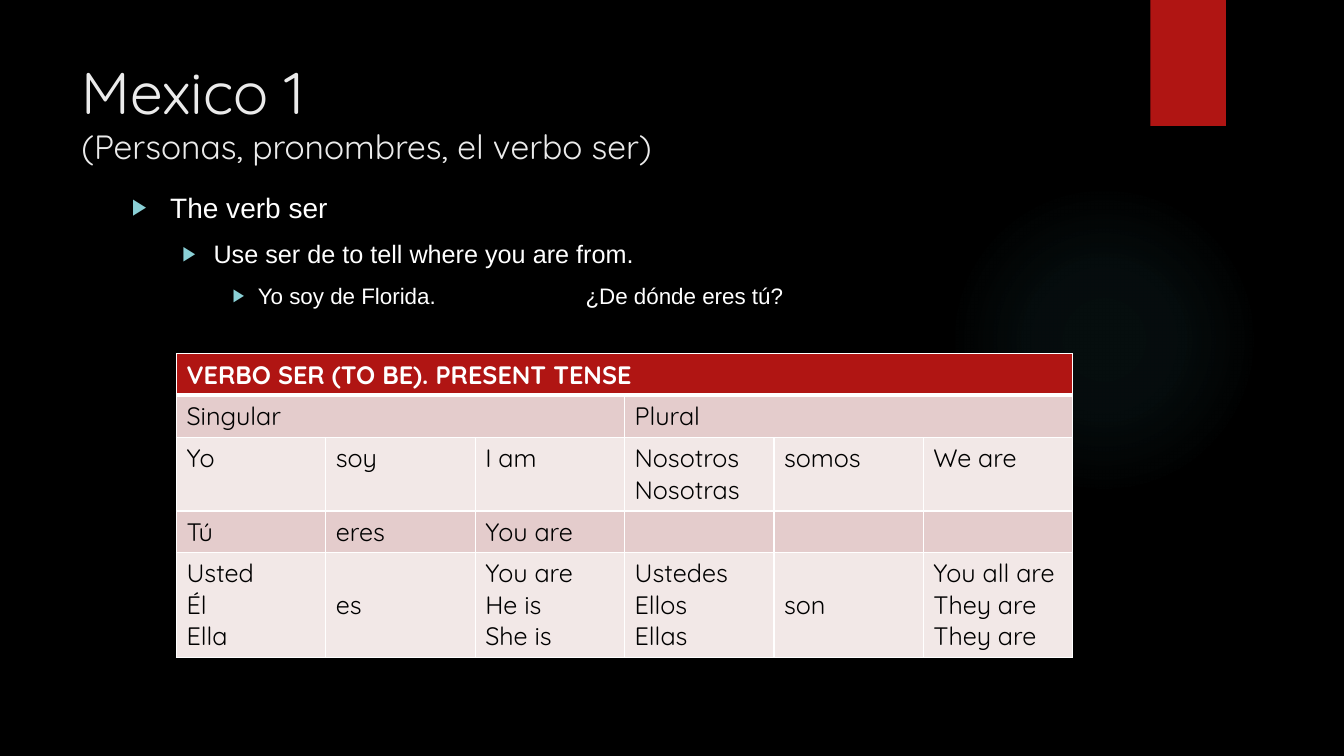
from lxml import etree
from pptx import Presentation
from pptx.dml.color import RGBColor
from pptx.enum import shapes, text
from pptx.oxml import parse_xml
from pptx.oxml.ns import nsdecls, qn
from pptx.util import Inches, Pt

BLACK = RGBColor(0x00, 0x00, 0x00)
WHITE = RGBColor(0xFF, 0xFF, 0xFF)
TITLE_GREY = RGBColor(0xEB, 0xEB, 0xEB)
RED = RGBColor(0xB0, 0x15, 0x13)
PINK = RGBColor(0xE4, 0xCC, 0xCC)
PALE_PINK = RGBColor(0xF2, 0xE8, 0xE7)
TEAL = RGBColor(0x50, 0xB9, 0xC1)
BULLET_TEAL = RGBColor(0x8A, 0xD0, 0xD6)

# Level: (left margin, hanging indent, text size)
LEVELS = [(0.38, 0.38, 20), (0.81, 0.31, 18), (1.25, 0.25, 16)]
BULLETS = [
    "The verb ser",
    "Use ser de to tell where you are from.",
    "Yo soy de Florida.\t¿De dónde eres tú?",
]
QUESTION_TAB = 4.5

COLUMN_WIDTH = 8.89 / 6
ROW_HEIGHTS = [0.41, 0.42, 0.73, 0.41, 1.04]
VERB_ROWS = [
    ["VERBO SER (TO BE). PRESENT TENSE"] + [""] * 5,
    ["Singular", "", "", "Plural", "", ""],
    ["Yo", "soy", "I am", "Nosotros\nNosotras", "somos", "We are"],
    ["Tú", "eres", "You are", "", "", ""],
    ["Usted\nÉl\nElla", "es", "You are\nHe is\nShe is",
     "Ustedes\nEllos\nEllas", "son", "You all are\nThey are\nThey are"],
]
ROW_FILLS = [RED, PINK, PALE_PINK, PINK, PALE_PINK]


def add_run(paragraph, content, size=18, font="Quicksand", color=BLACK, bold=False):
    run = paragraph.add_run()
    run.text = content
    run.font.size = Pt(size)
    run.font.name = font
    run.font.bold = bold
    run.font.color.rgb = color


def add_text_frame(slide, left, top, width, height):
    box = slide.shapes.add_textbox(*map(Inches, (left, top, width, height)))
    box.text_frame.word_wrap = True
    return box.text_frame


def add_plain_shape(slide, kind, left, top, width, height):
    shape = slide.shapes.add_shape(kind, *map(Inches, (left, top, width, height)))
    shape.shadow.inherit = False
    shape.line.fill.background()
    return shape


def add_glow(slide):
    glow = add_plain_shape(slide, shapes.MSO_SHAPE.OVAL, 9.41, 1.83, 3.08, 3.08)
    stops = "".join(
        f'<a:gs pos="{position * 1000}"><a:srgbClr val="{TEAL}">'
        f'<a:alpha val="{opacity * 1000}"/></a:srgbClr></a:gs>'
        for position, opacity in [(0, 7), (36, 6), (69, 0)])
    gradient = parse_xml(
        f'<a:gradFill {nsdecls("a")}><a:gsLst>{stops}</a:gsLst><a:path path="circle">'
        '<a:fillToRect l="50000" t="50000" r="50000" b="50000"/></a:path></a:gradFill>')
    glow._element.spPr.find(qn("a:prstGeom")).addnext(gradient)


def add_ribbon(slide):
    ribbon = add_plain_shape(slide, shapes.MSO_SHAPE.RECTANGLE, 11.41, 0, 0.75, 1.25)
    ribbon.fill.solid()
    ribbon.fill.fore_color.rgb = RED
    effects = ribbon._element.spPr.find(qn("a:effectLst"))
    effects.append(parse_xml(
        f'<a:outerShdw {nsdecls("a")} blurRad="{Pt(3)}" dist="{Pt(2)}" dir="5400000">'
        f'<a:srgbClr val="{BLACK}"><a:alpha val="45000"/></a:srgbClr></a:outerShdw>'))


def format_bullet(paragraph, level):
    margin, hanging, _ = LEVELS[level]
    paragraph.level = level
    properties = paragraph._p.get_or_add_pPr()
    properties.set("marL", str(Inches(margin)))
    properties.set("indent", str(-Inches(hanging)))
    color = etree.SubElement(properties, qn("a:buClr"))
    etree.SubElement(color, qn("a:srgbClr"), val=str(BULLET_TEAL))
    etree.SubElement(properties, qn("a:buSzPct"), val="80000")
    etree.SubElement(properties, qn("a:buFont"), typeface="Arial")
    etree.SubElement(properties, qn("a:buChar"), char="▶")
    tabs = etree.SubElement(properties, qn("a:tabLst"))
    etree.SubElement(tabs, qn("a:tab"), pos=str(Inches(QUESTION_TAB)), algn="l")


def add_bullets(slide):
    frame = add_text_frame(slide, 1.21, 1.84, 10.63, 1.5)
    for level, content in enumerate(BULLETS):
        paragraph = frame.add_paragraph() if level else frame.paragraphs[0]
        format_bullet(paragraph, level)
        if level:
            paragraph.space_before = Pt(10)
        add_run(paragraph, content, size=LEVELS[level][2], font="Arial", color=WHITE)


def set_borders(cell, bottom_width):
    properties = cell._tc.get_or_add_tcPr()
    for side, width in [("L", 1), ("R", 1), ("T", 1), ("B", bottom_width)]:
        properties.append(parse_xml(
            f'<a:ln{side} {nsdecls("a")} w="{Pt(width)}"><a:solidFill>'
            f'<a:srgbClr val="{WHITE}"/></a:solidFill></a:ln{side}>'))


def fill_cell(cell, content, fill, header, centred):
    set_borders(cell, 3 if header else 1)
    cell.fill.solid()
    cell.fill.fore_color.rgb = fill
    if centred:
        cell.vertical_anchor = text.MSO_ANCHOR.MIDDLE
    for index, line in enumerate(content.split("\n") if content else []):
        frame = cell.text_frame
        paragraph = frame.add_paragraph() if index else frame.paragraphs[0]
        add_run(paragraph, line, color=WHITE if header else BLACK, bold=header)


def add_verb_table(slide):
    table = slide.shapes.add_table(
        len(VERB_ROWS), 6, Inches(1.75), Inches(3.51),
        Inches(6 * COLUMN_WIDTH), Inches(sum(ROW_HEIGHTS))).table
    table.first_row = table.horz_banding = False
    for column in table.columns:
        column.width = Inches(COLUMN_WIDTH)
    for r, row in enumerate(VERB_ROWS):
        table.rows[r].height = Inches(ROW_HEIGHTS[r])
        for c, content in enumerate(row):
            # The verb forms in the last row sit beside three pronouns
            centred = r == 4 and c in (1, 4)
            fill_cell(table.cell(r, c), content, ROW_FILLS[r], r == 0, centred)
    # Heading spans
    for r, first, last in [(0, 0, 5), (1, 0, 2), (1, 3, 5)]:
        table.cell(r, first).merge(table.cell(r, last))


def main():
    presentation = Presentation()
    presentation.slide_width = Inches(13.33)
    presentation.slide_height = Inches(7.5)
    slide = presentation.slides.add_slide(presentation.slide_layouts[6])
    slide.background.fill.solid()
    slide.background.fill.fore_color.rgb = BLACK

    # Decoration
    add_glow(slide)
    add_ribbon(slide)

    # Title and subtitle
    title = add_text_frame(slide, 0.71, 0.5, 10.29, 1.53).paragraphs[0]
    add_run(title, "Mexico 1", size=42, color=TITLE_GREY)
    title.add_line_break()
    add_run(title, "(Personas, pronombres, el verbo ser)", size=24, color=TITLE_GREY)

    # Content
    add_bullets(slide)
    add_verb_table(slide)
    presentation.save("out.pptx")


if __name__ == "__main__":
    main()
